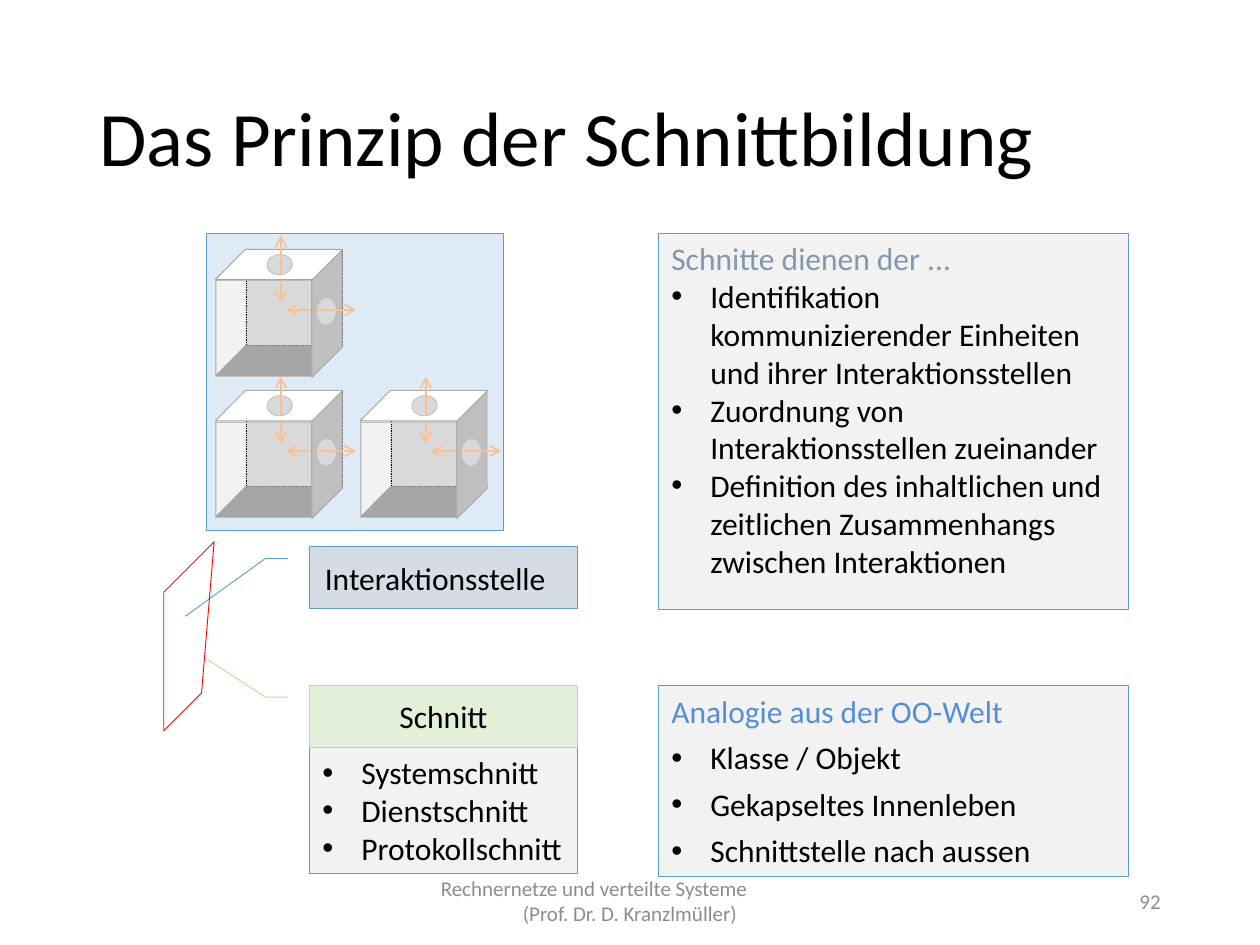
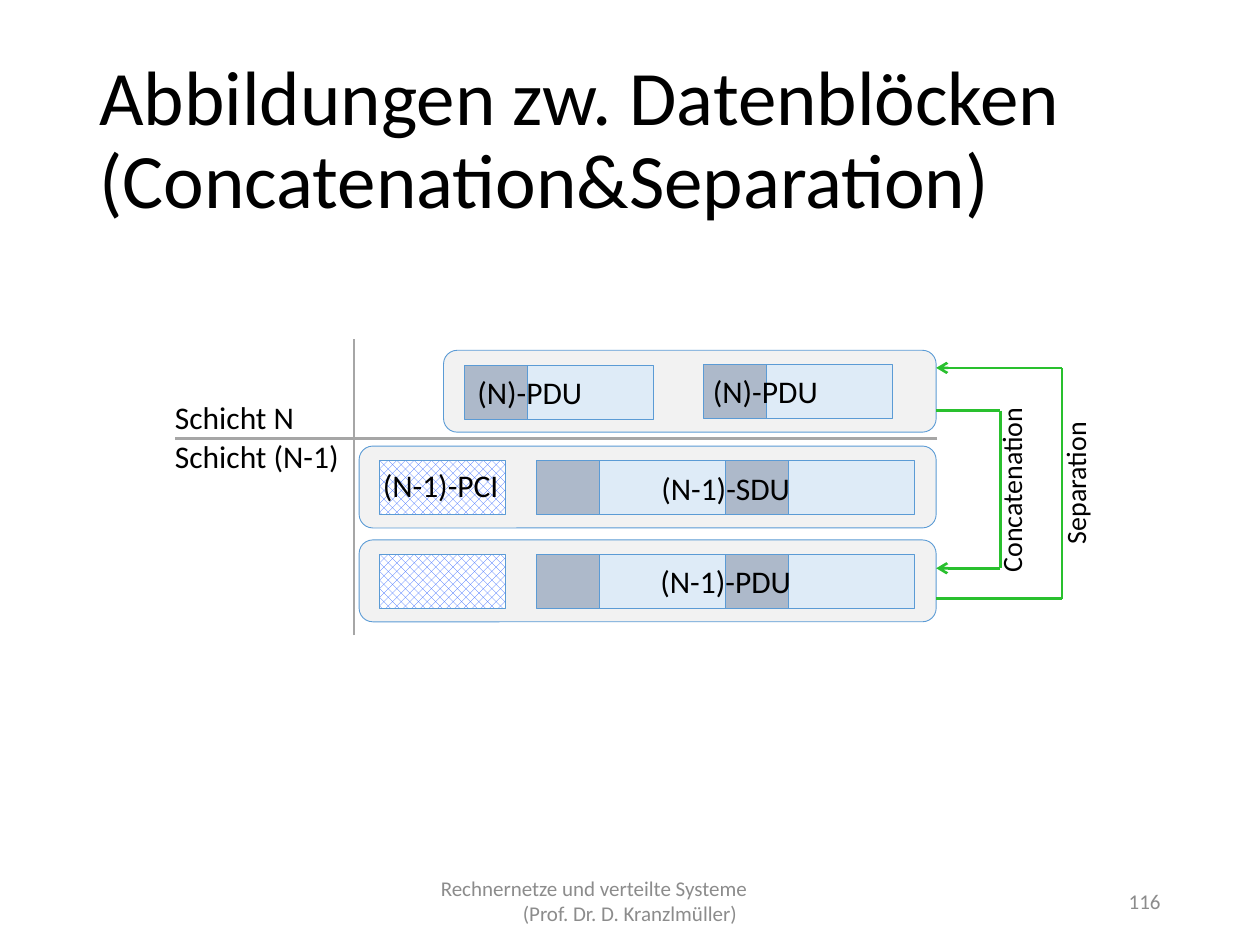
from dataclasses import dataclass
from typing import NamedTuple

from lxml import etree
from pptx import Presentation
from pptx import util as u
from pptx.dml.color import RGBColor
from pptx.enum import dml, shapes, text
from pptx.oxml import ns

# Grid of 100 columns by 75 rows; every length below counts grid cells.
COLUMNS, ROWS = 100, 75
CELL = u.Inches(0.1)

FONT = "Calibri"
BLACK = RGBColor(0, 0, 0)
WHITE = RGBColor(0xFF, 0xFF, 0xFF)
PANEL = RGBColor(0xF2, 0xF2, 0xF2)
BLUE_LINE = RGBColor(0x5B, 0x9B, 0xD5)
PALE_BLUE = RGBColor(0xDE, 0xEB, 0xF7)
STEEL = RGBColor(0xAD, 0xB9, 0xCA)
HATCH_BLUE = RGBColor(0x33, 0x66, 0xFF)
SLATE = RGBColor(0x84, 0x97, 0xB0)
HEADING_BLUE = RGBColor(0x55, 0x8E, 0xD5)
LAVENDER = RGBColor(0xD6, 0xDC, 0xE5)
PALE_GREEN = RGBColor(0xE2, 0xF0, 0xD9)
ORANGE = RGBColor(0xFA, 0xC0, 0x90)
RED = RGBColor(0xFF, 0, 0)
GREEN = RGBColor(0x29, 0xC0, 0x2E)
FOOTER_GREY = RGBColor(0x8C, 0x8C, 0x8C)
DARK_GREY = RGBColor(0xA6, 0xA6, 0xA6)
MID_GREY = RGBColor(0xBF, 0xBF, 0xBF)
LIGHT_GREY = RGBColor(0xD9, 0xD9, 0xD9)

SHAPE = shapes.MSO_SHAPE
LEFT, CENTER, RIGHT = text.PP_ALIGN.LEFT, text.PP_ALIGN.CENTER, text.PP_ALIGN.RIGHT
TOP, MIDDLE = text.MSO_ANCHOR.TOP, text.MSO_ANCHOR.MIDDLE


class Box(NamedTuple):
    left: float
    top: float
    width: float
    height: float

    def moved(self, right: float, down: float) -> "Box":
        return Box(self.left + right, self.top + down, self.width, self.height)


class Line(NamedTuple):
    text: str
    color: RGBColor = BLACK
    bullet: bool = False
    align: object = None
    indent: float = 0


class Face(NamedTuple):
    """One side of a cube, placed relative to the cube's corner."""
    kind: object
    box: Box
    fill: RGBColor | None
    line: RGBColor = DARK_GREY
    rotation: float = 0
    flip: bool = False
    dotted: bool = False


class Arrow(NamedTuple):
    start: tuple
    end: tuple


@dataclass
class Loop:
    """A bracket right of the frames, with its arrowhead at one end."""
    label: str
    right: float
    start: float
    end: float
    label_box: Box
    align: object


def cells(*lengths: float) -> list[int]:
    return [round(length * CELL) for length in lengths]


def write(shape, lines, size=18, align=LEFT, anchor=TOP, wrap=True, before=0, spacing=None,
          right_inset=1.0):
    frame = shape.text_frame
    frame.word_wrap = wrap
    frame.vertical_anchor = anchor
    frame.margin_right = cells(right_inset)[0]
    for index, line in enumerate(lines):
        paragraph = frame.add_paragraph() if index else frame.paragraphs[0]
        properties = paragraph._p.get_or_add_pPr()
        if line.bullet:
            indent, = cells(3.1)
            properties.set("marL", str(indent))
            properties.set("indent", str(-indent))
            etree.SubElement(properties, ns.qn("a:buFont"), typeface="Arial")
            etree.SubElement(properties, ns.qn("a:buChar"), char="•")
        elif line.indent:
            properties.set("marL", str(cells(line.indent)[0]))
        paragraph.alignment = align if line.align is None else line.align
        if spacing:
            paragraph.line_spacing = spacing
        if index and before:
            paragraph.space_before = u.Pt(before)
        paragraph.text = line.text
        for run in paragraph.runs:
            run.font.size = u.Pt(size)
            run.font.name = FONT
            run.font.color.rgb = line.color


def add_text(slide, box: Box, lines, rotation=0, **form):
    shape = slide.shapes.add_textbox(*cells(*box))
    shape.rotation = rotation
    write(shape, lines, **form)


def add_block(slide, kind, box: Box, fill=None, line=BLUE_LINE):
    shape = slide.shapes.add_shape(kind, *cells(*box))
    style(shape, fill, line)
    return shape


def style(shape, fill, line) -> None:
    shape.shadow.inherit = False
    if fill is None:
        shape.fill.background()
    else:
        shape.fill.solid()
        shape.fill.fore_color.rgb = fill
    shape.line.color.rgb = line
    shape.line.width = u.Pt(0.5)


def add_line(slide, start, end, color, width=1.5, arrow=False) -> None:
    line = slide.shapes.add_connector(shapes.MSO_CONNECTOR.STRAIGHT, *cells(*start, *end))
    line.line.color.rgb = color
    line.line.width = u.Pt(width)
    if arrow:
        etree.SubElement(line.line._get_or_add_ln(), ns.qn("a:tailEnd"), type="arrow")
    etree.SubElement(line._element.spPr, ns.qn("a:effectLst"))


def bullets(*items: str) -> list[Line]:
    return [Line(item, bullet=True) for item in items]


def new_slide(presentation, title: str, number: int):
    slide = presentation.slides.add_slide(presentation.slide_layouts[6])
    add_text(slide, Box(6.9, 4, 86.2, 14.5), [Line(title)], size=44, anchor=MIDDLE, spacing=0.9)
    add_text(slide, Box(33.1, 69.5, 33.8, 4),
             [Line("Rechnernetze und verteilte Systeme", FOOTER_GREY, align=LEFT, indent=0.9),
              Line("(Prof. Dr. D. Kranzlmüller)", FOOTER_GREY)],
             size=12, align=CENTER, anchor=MIDDLE)
    add_text(slide, Box(70.6, 69.5, 22.5, 4), [Line(str(number), FOOTER_GREY)],
             size=12, align=RIGHT, anchor=MIDDLE)
    return slide


SLANTED = Box(0, 0, 10.1, 2.4)
SQUARE = Box(0, 0, 7.6, 7.6)
CUBE_PARTS = [
    Face(SHAPE.PARALLELOGRAM, SLANTED.moved(-3.8, 3.8), PANEL, rotation=90, flip=True),
    Face(SHAPE.RECTANGLE, SQUARE.moved(2.45, 0), LIGHT_GREY, BLACK, dotted=True),
    Face(SHAPE.PARALLELOGRAM, SLANTED.moved(0, 7.65), DARK_GREY),
    Face(SHAPE.RECTANGLE, SQUARE.moved(0, 2.5), None, MID_GREY),
    Arrow((5.2, 2.3), (5.2, 4.2)),
    Face(SHAPE.PARALLELOGRAM, SLANTED, WHITE),
    Face(SHAPE.OVAL, Box(4.1, 0.4, 2, 1.6), LIGHT_GREY, MID_GREY, rotation=355.2),
    Arrow((5.2, 2), (5.2, -1.1)),
    Face(SHAPE.PARALLELOGRAM, SLANTED.moved(3.8, 3.9), MID_GREY, rotation=90, flip=True),
    Face(SHAPE.OVAL, Box(7.7, 4.1, 2.2, 1.6), LIGHT_GREY, MID_GREY, rotation=94),
    Arrow((8.1, 4.8), (11.15, 4.8)),
    Arrow((7.6, 4.8), (5.6, 4.8)),
]


def add_cube(slide, left: float, top: float) -> None:
    for part in CUBE_PARTS:
        if isinstance(part, Arrow):
            start, end = ((left + x, top + y) for x, y in part)
            add_line(slide, start, end, ORANGE, width=1, arrow=True)
            continue
        face = add_block(slide, part.kind, part.box.moved(left, top), part.fill, part.line)
        face.rotation = part.rotation
        if part.kind == SHAPE.PARALLELOGRAM:
            face.adjustments[0] = 0.987
        if part.flip:
            face._element.spPr.find(ns.qn("a:xfrm")).set("flipV", "1")
        if part.dotted:
            face.line.dash_style = dml.MSO_LINE.ROUND_DOT


def add_callout(slide, top, label, fill, line, tip_row, tip_column, right_inset=1.0) -> None:
    callout = add_block(slide, SHAPE.LINE_CALLOUT_2, Box(24.6, top, 21.2, 4.9), fill, line)
    for index, value in enumerate((0.188, -0.083, 0.188, -0.167, tip_row, tip_column)):
        callout.adjustments[index] = value
    write(callout, [Line(label)], align=CENTER, anchor=MIDDLE, right_inset=right_inset)


def build_cut_slide(presentation) -> None:
    slide = new_slide(presentation, "Das Prinzip der Schnittbildung", 92)
    kinds = add_block(slide, SHAPE.RECTANGLE, Box(24.6, 59.3, 21.2, 10), PANEL)
    write(kinds, bullets("Systemschnitt", "Dienstschnitt", "Protokollschnitt"))
    add_block(slide, SHAPE.RECTANGLE, Box(16.4, 18.5, 23.6, 23.6), PALE_BLUE)
    for left, top in ((28.6, 31), (17.1, 19.8), (17.1, 31)):
        add_cube(slide, left, top)
    add_callout(slide, 43.4, "Interaktionsstelle", LAVENDER, BLUE_LINE, 1.125, -0.467,
                right_inset=2.3)
    add_callout(slide, 54.4, "Schnitt", PALE_GREEN, ORANGE, -0.42, -0.383)

    outline = [(16.6, 43.1), (12.7, 47), (12.9, 58.2), (16.5, 54.8)]
    builder = slide.shapes.build_freeform(*outline[0], scale=CELL)
    builder.add_line_segments(outline[1:], close=True)
    style(builder.convert_to_shape(), None, RED)

    purpose = add_block(slide, SHAPE.RECTANGLE, Box(52.3, 18.5, 37.3, 29.9), PANEL)
    write(purpose, [Line("Schnitte dienen der ...", SLATE)] + bullets(
        "Identifikation kommunizierender Einheiten und ihrer Interaktionsstellen",
        "Zuordnung von Interaktionsstellen zueinander",
        "Definition des inhaltlichen und zeitlichen Zusammenhangs zwischen Interaktionen"))
    analogy = add_block(slide, SHAPE.RECTANGLE, Box(52.3, 54.4, 37.3, 15.2), PANEL)
    write(analogy, [Line("Analogie aus der OO-Welt", HEADING_BLUE)] + bullets(
        "Klasse / Objekt", "Gekapseltes Innenleben", "Schnittstelle nach aussen"), before=5)


def add_frame(slide, left: float, top: float) -> None:
    frame_right = 74.3
    add_block(slide, SHAPE.ROUNDED_RECTANGLE, Box(left, top, frame_right - left, 6.5), PANEL)


def add_data_units(slide, left, top, label, count=1, align=LEFT, label_shift=0.0) -> None:
    """Draw header and payload pairs side by side under one label."""
    header, payload, height = 5, 10, 4.3
    pair = header + payload
    for index in range(count):
        start = left + index * pair
        add_block(slide, SHAPE.RECTANGLE, Box(start, top, header, height), STEEL)
        add_block(slide, SHAPE.RECTANGLE, Box(start + header, top, payload, height), PALE_BLUE)
    add_text(slide, Box(left + label_shift, top + 0.15, count * pair, 4), [Line(label)],
             align=align)


def add_control_block(slide, left: float, top: float) -> None:
    block = add_block(slide, SHAPE.RECTANGLE, Box(left, top, 10, 4.3))
    block.fill.patterned()
    block.fill.pattern = dml.MSO_PATTERN.PERCENT_50
    block.fill.fore_color.rgb = HATCH_BLUE
    block.fill.back_color.rgb = WHITE


def add_loop(slide, loop: Loop) -> None:
    frame_edge = 74.3
    add_line(slide, (loop.right, loop.start), (frame_edge, loop.start), GREEN)
    add_line(slide, (loop.right, loop.start), (loop.right, loop.end), GREEN)
    add_line(slide, (loop.right, loop.end), (frame_edge, loop.end), GREEN, arrow=True)
    add_text(slide, loop.label_box, [Line(loop.label)], rotation=270, size=16, align=loop.align)


def build_mapping_slide(presentation) -> None:
    slide = new_slide(presentation, "Abbildungen zw. Datenblöcken\n(Concatenation&Separation)", 116)
    add_line(slide, (28.1, 50.4), (28.1, 26.9), DARK_GREY)
    add_line(slide, (74.4, 34.8), (13.9, 34.8), DARK_GREY)
    for label, top in (("Schicht N", 31.1), ("Schicht (N-1)", 34.2)):
        add_text(slide, Box(12.9, top, 15.2, 4), [Line(label)], wrap=False)

    add_frame(slide, 35.2, 27.8)
    add_data_units(slide, 36.9, 29, "(N)-PDU")
    add_data_units(slide, 55.8, 28.9, "(N)-PDU", label_shift=-0.2)
    for top, label in ((35.4, "(N-1)-SDU"), (42.85, "(N-1)-PDU")):
        add_frame(slide, 28.5, top)
        add_control_block(slide, 30.15, top + 1.15)
        add_data_units(slide, 42.6, top + 1.15, label, count=2, align=CENTER)
    add_text(slide, Box(29.4, 36.5, 11.7, 4), [Line("(N-1)-PCI")])

    for loop in (Loop("Separation", 84.3, 47.5, 29.2, Box(76.2, 36.5, 18.3, 3.7), CENTER),
                 Loop("Concatenation", 79.4, 32.6, 45.1, Box(72.5, 36.8, 15.5, 3.7), LEFT)):
        add_loop(slide, loop)


def main() -> None:
    presentation = Presentation()
    presentation.slide_width, presentation.slide_height = cells(COLUMNS, ROWS)
    build_cut_slide(presentation)
    build_mapping_slide(presentation)
    presentation.save("out.pptx")


if __name__ == "__main__":
    main()
